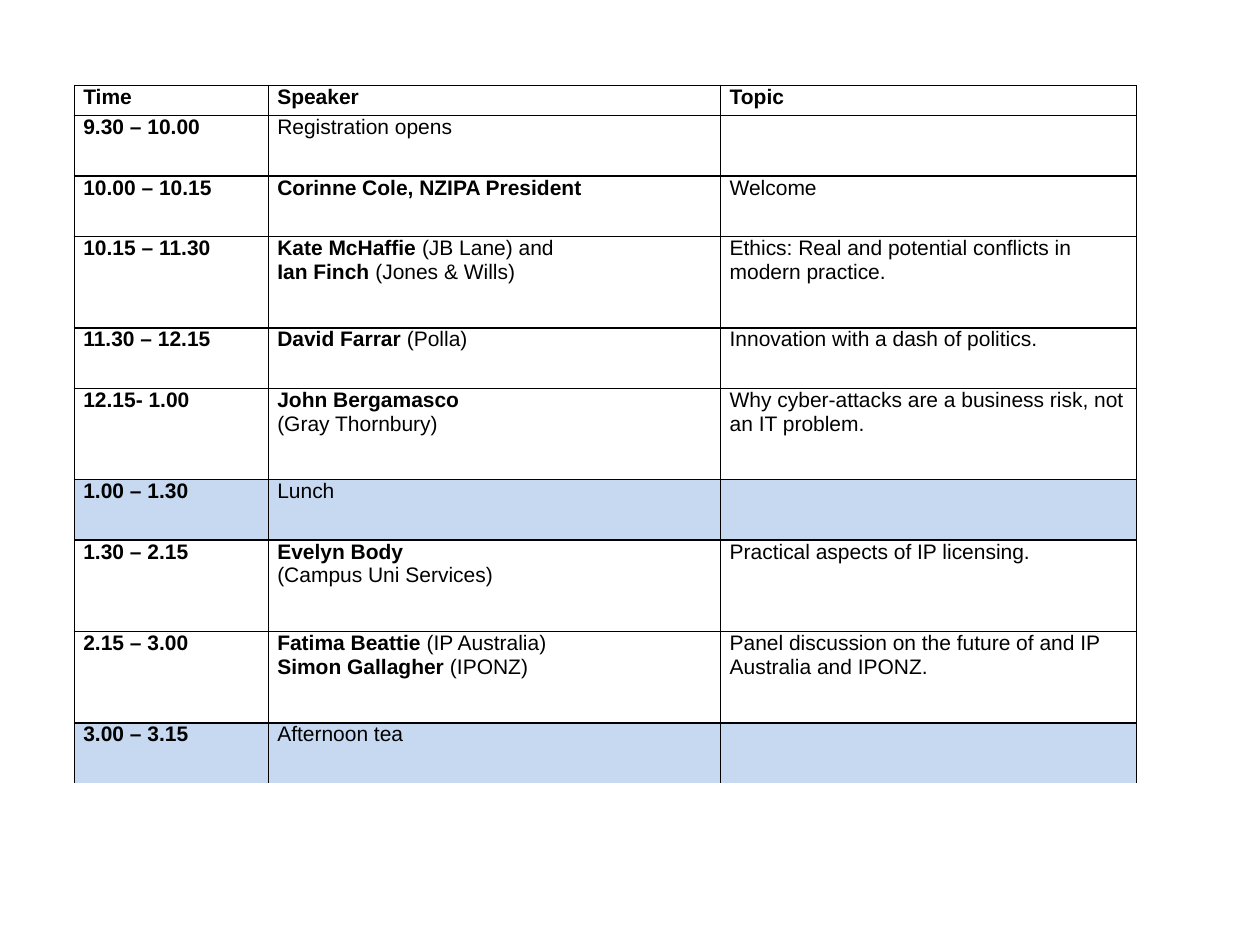
"""Build a one-slide seminar programme table."""

from dataclasses import dataclass

from lxml.etree import SubElement
from pptx import Presentation
from pptx.dml.color import RGBColor
from pptx.oxml.ns import qn
from pptx.slide import Slide
from pptx.table import _Cell
from pptx.util import Cm, Pt

COLOURS = {"text": "000000", "border": "000000", "plain": "FFFFFF", "break": "C6D9F1"}
FONT_NAME = "Arial"
FONT_SIZE = Pt(12)
BORDER_WIDTH = Pt(1)
COLUMN_WIDTHS = [Cm(3.91), Cm(9.12), Cm(8.38)]
HEADER, SHORT, TALL = Cm(0.61), Cm(1.22), Cm(1.84)


@dataclass(frozen=True)
class Line:
    """Hold one line of text: a bold part followed by a regular part."""

    bold: str = ""
    regular: str = ""


@dataclass(frozen=True)
class Session:
    """Hold one row of the programme."""

    time: str
    speakers: tuple[Line, ...]
    topic: Line = Line()
    height: int = SHORT
    fill: str = "plain"


SESSIONS = [
    Session("Time", (Line("Speaker"),), Line("Topic"), HEADER),
    Session("9.30 – 10.00", (Line(regular="Registration opens"),)),
    Session("10.00 – 10.15", (Line("Corinne Cole, NZIPA President"),), Line(regular="Welcome")),
    Session(
        "10.15 – 11.30",
        (Line("Kate McHaffie ", "(JB Lane) and"), Line("Ian Finch ", "(Jones & Wills)")),
        Line(regular="Ethics: Real and potential conflicts in modern practice."),
        TALL,
    ),
    Session(
        "11.30 – 12.15",
        (Line("David Farrar ", "(Polla)"),),
        Line(regular="Innovation with a dash of politics."),
    ),
    Session(
        "12.15- 1.00",
        (Line("John Bergamasco"), Line(regular="(Gray Thornbury)")),
        Line(regular="Why cyber-attacks are a business risk, not an IT problem."),
        TALL,
    ),
    Session("1.00 – 1.30", (Line(regular="Lunch"),), fill="break"),
    Session(
        "1.30 – 2.15",
        (Line("Evelyn Body"), Line(regular="(Campus Uni Services)")),
        Line(regular="Practical aspects of IP licensing."),
        TALL,
    ),
    Session(
        "2.15 – 3.00",
        (Line("Fatima Beattie", " (IP Australia)"), Line("Simon Gallagher", " (IPONZ)")),
        Line(regular="Panel discussion on the future of and IP Australia and IPONZ."),
        TALL,
    ),
    Session("3.00 – 3.15", (Line(regular="Afternoon tea"),), fill="break"),
]


def set_borders(cell: _Cell, has_bottom: bool) -> None:
    """Draw the cell borders, leaving the bottom one open if asked."""
    properties = cell._tc.get_or_add_tcPr()
    for side in ("L", "R", "T", "B"):
        border = SubElement(properties, qn(f"a:ln{side}"), w=str(BORDER_WIDTH))
        if side == "B" and not has_bottom:
            SubElement(border, qn("a:noFill"))
        else:
            fill = SubElement(border, qn("a:solidFill"))
            SubElement(fill, qn("a:srgbClr"), val=COLOURS["border"])


def write_lines(cell: _Cell, lines: tuple[Line, ...]) -> None:
    """Write lines of bold and regular text into a cell."""
    text_frame = cell.text_frame
    text_frame.text = "\n".join(line.bold + line.regular for line in lines)
    for paragraph, line in zip(text_frame.paragraphs, lines):
        paragraph.font.size = FONT_SIZE
        if line.bold and line.regular:
            paragraph.runs[0].text = line.bold
            paragraph.add_run().text = line.regular
        for run in paragraph.runs:
            run.font.name = FONT_NAME
            run.font.size = FONT_SIZE
            run.font.bold = run.text == line.bold
            run.font.color.rgb = RGBColor.from_string(COLOURS["text"])


def add_programme(slide: Slide, sessions: list[Session]) -> None:
    """Add the programme table to the slide."""
    table = slide.shapes.add_table(
        len(sessions),
        len(COLUMN_WIDTHS),
        Cm(1.5),
        Cm(1.72),
        sum(COLUMN_WIDTHS),
        sum(session.height for session in sessions),
    ).table
    table.first_row = table.horz_banding = False
    for column, width in zip(table.columns, COLUMN_WIDTHS):
        column.width = width
    for row, session in zip(table.rows, sessions):
        row.height = session.height
        contents = ((Line(session.time),), session.speakers, (session.topic,))
        for cell, lines in zip(row.cells, contents):
            cell.margin_left = cell.margin_right = Cm(0.18)
            cell.margin_top = cell.margin_bottom = 0
            set_borders(cell, has_bottom=session is not sessions[-1])
            cell.fill.solid()
            cell.fill.fore_color.rgb = RGBColor.from_string(COLOURS[session.fill])
            write_lines(cell, lines)


def main() -> None:
    """Create and save the presentation."""
    presentation = Presentation()
    presentation.slide_width, presentation.slide_height = Cm(25.4), Cm(19.05)
    slide = presentation.slides.add_slide(presentation.slide_layouts[6])
    add_programme(slide, SESSIONS)
    presentation.save("out.pptx")


if __name__ == "__main__":
    main()
